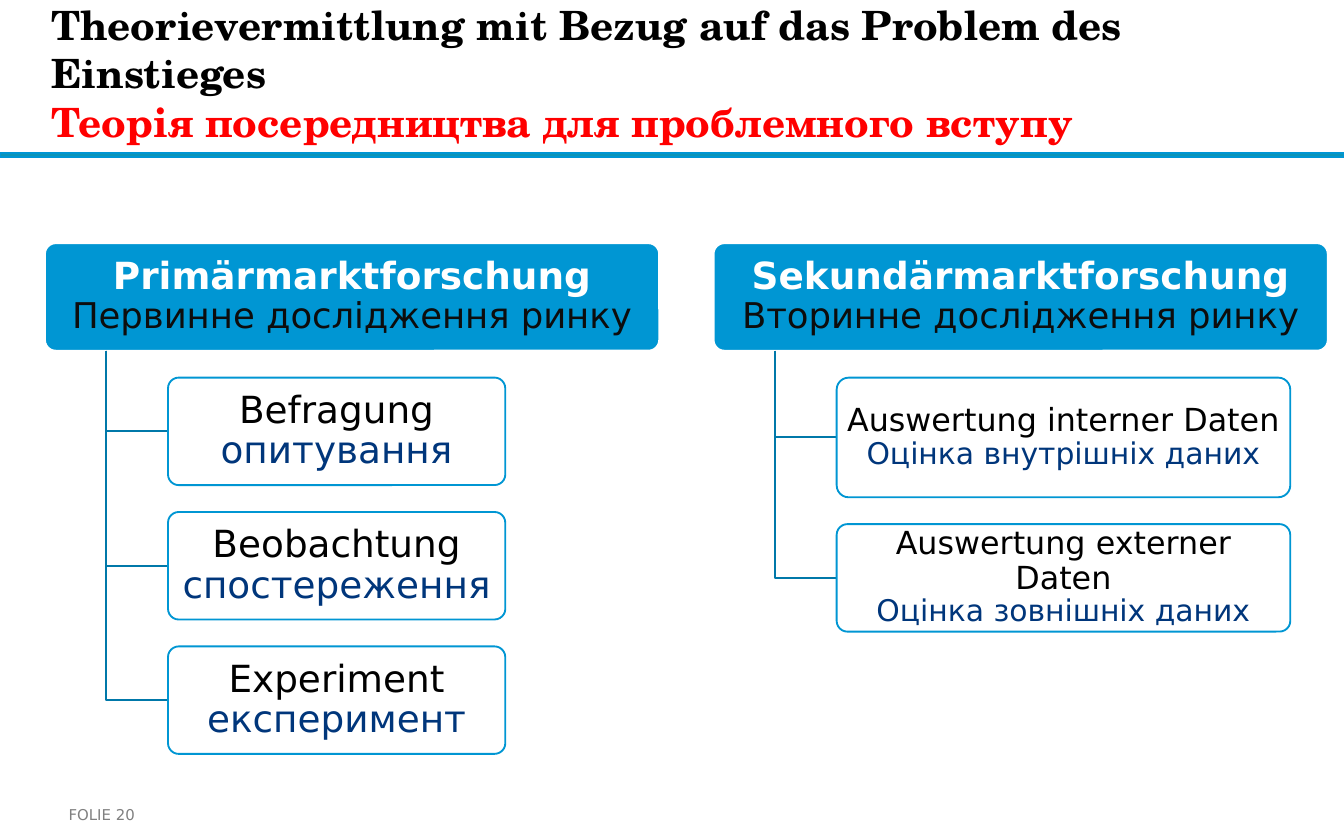
from dataclasses import dataclass

from lxml.etree import SubElement
from pptx import Presentation
from pptx.dml.color import RGBColor
from pptx.enum.shapes import MSO_SHAPE
from pptx.enum.text import MSO_ANCHOR, MSO_AUTO_SIZE, PP_ALIGN
from pptx.oxml.ns import qn
from pptx.util import Inches, Pt

COLORS = {
    "blue": "0096D3", "rule": "0C94B7", "branch": "0078A9", "navy": "00367B",
    "white": "FFFFFF", "black": "000000", "dark": "0D0D0D",
    "red": "FF0000", "grey": "808080",
}
SANS, SERIF = "DejaVu Sans", "TeX Gyre Schola"
TOP, HEADER_W, BOX_H, GAP = 1.81, 4.57, 0.8, 0.2
TRUNK_DX, ITEM_DX = 0.455, 0.915


@dataclass
class Item:
    german: str
    ukrainian: str
    height: float = BOX_H


@dataclass
class Branch:
    left: float
    german: str
    ukrainian: str
    item_width: float
    sizes: tuple[float, float]
    items: list[Item]


BRANCHES = [
    Branch(0.335, "Primärmarktforschung", "Первинне дослідження ринку", 2.51, (20, 20), [
        Item("Befragung", "опитування"),
        Item("Beobachtung", "спостереження"),
        Item("Experiment", "експеримент"),
    ]),
    Branch(5.31, "Sekundärmarktforschung", "Вторинне дослідження ринку", 3.375, (17, 16), [
        Item("Auswertung interner Daten", "Оцінка внутрішніх даних", 0.89),
        Item("Auswertung externer Daten", "Оцінка зовнішніх даних"),
    ]),
]


def color(name: str) -> RGBColor:
    return RGBColor.from_string(COLORS[name])


def add_text(p, text: str, *, size: float, fill: str, font: str = SANS, bold: bool = False) -> None:
    r = p.add_run()
    r.text = text
    r.font.name, r.font.size, r.font.bold = font, Pt(size), bold
    r.font.color.rgb = color(fill)


def set_frame(tf, anchor, x_inset: float = 0, y_inset: float = 0) -> None:
    tf.word_wrap, tf.auto_size, tf.vertical_anchor = True, MSO_AUTO_SIZE.NONE, anchor
    tf.margin_left = tf.margin_right = Inches(x_inset)
    tf.margin_top = tf.margin_bottom = Inches(y_inset)


def add_box(s, kind, x: float, y: float, w: float, h: float, fill: str, line: str):
    sp = s.shapes.add_shape(kind, Inches(x), Inches(y), Inches(w), Inches(h))
    sp.shadow.inherit = False
    sp.fill.solid()
    sp.fill.fore_color.rgb = color(fill)
    sp.line.color.rgb = color(line)
    sp.line.width = Pt(1)
    return sp


def add_card(s, x: float, y: float, w: float, h: float, fill: str, line: str,
             lines: list[tuple[str, dict]]):
    """Rounded box with one centred paragraph per (text, format) pair."""
    sp = add_box(s, MSO_SHAPE.ROUNDED_RECTANGLE, x, y, w, h, fill, line)
    sp.adjustments[0] = 0.1
    tf = sp.text_frame
    set_frame(tf, MSO_ANCHOR.MIDDLE, 0.04, 0.03)
    for i, (text, fmt) in enumerate(lines):
        p = tf.add_paragraph() if i else tf.paragraphs[0]
        p.alignment, p.line_spacing = PP_ALIGN.CENTER, 0.9
        add_text(p, text, **fmt)
    return sp


def add_elbow(s, x: float, y: float, end_x: float, end_y: float) -> None:
    fb = s.shapes.build_freeform(Inches(x), Inches(y))
    fb.add_line_segments([(Inches(x), Inches(end_y)), (Inches(end_x), Inches(end_y))], close=False)
    sp = fb.convert_to_shape()
    sp.shadow.inherit = False
    sp.fill.background()
    sp.line.color.rgb = color("branch")
    sp.line.width = Pt(1)


def add_branch(s, b: Branch) -> None:
    add_card(s, b.left, TOP, HEADER_W, BOX_H, "blue", "white", [
        (b.german, dict(size=20, fill="white", bold=True)),
        (b.ukrainian, dict(size=19, fill="dark")),
    ])
    bottom = TOP + BOX_H
    x, y = b.left + ITEM_DX, bottom + GAP
    for item in b.items:
        add_elbow(s, b.left + TRUNK_DX, bottom, x, y + item.height / 2)
        card = add_card(s, x, y, b.item_width, item.height, "white", "blue", [
            (item.german, dict(size=b.sizes[0], fill="black")),
            (item.ukrainian, dict(size=b.sizes[1], fill="navy")),
        ])
        rgb = card.fill._xPr.find(qn("a:solidFill"))[0]
        SubElement(rgb, qn("a:alpha"), val="90000")
        y += item.height + GAP


def add_title(s) -> None:
    title = s.shapes.title
    title.left, title.top = Inches(0.38), Inches(0)
    title.width, title.height = Inches(7.99), Inches(1.13)
    set_frame(title.text_frame, MSO_ANCHOR.TOP)
    p = title.text_frame.paragraphs[0]
    p.alignment = PP_ALIGN.LEFT
    fmt = dict(size=21.6, font=SERIF, bold=True)
    add_text(p, "Theorievermittlung mit Bezug auf das Problem des Einstieges", fill="black", **fmt)
    p.add_line_break()
    add_text(p, "Теорія посередництва для проблемного вступу", fill="red", **fmt)


def add_footer(s) -> None:
    tb = s.shapes.add_textbox(Inches(0.51), Inches(5.92), Inches(0.98), Inches(0.28))
    set_frame(tb.text_frame, MSO_ANCHOR.MIDDLE, 0, 0.05)
    add_text(tb.text_frame.paragraphs[0], "FOLIE 20", size=8, fill="grey")


def main() -> None:
    prs = Presentation()
    prs.slide_width, prs.slide_height = Inches(10), Inches(6.25)
    s = prs.slides.add_slide(prs.slide_layouts[5])
    add_box(s, MSO_SHAPE.RECTANGLE, 0, 1.14, 10, 0.03, "rule", "blue")
    add_title(s)
    add_footer(s)
    for branch in BRANCHES:
        add_branch(s, branch)
    prs.save("out.pptx")


if __name__ == "__main__":
    main()
